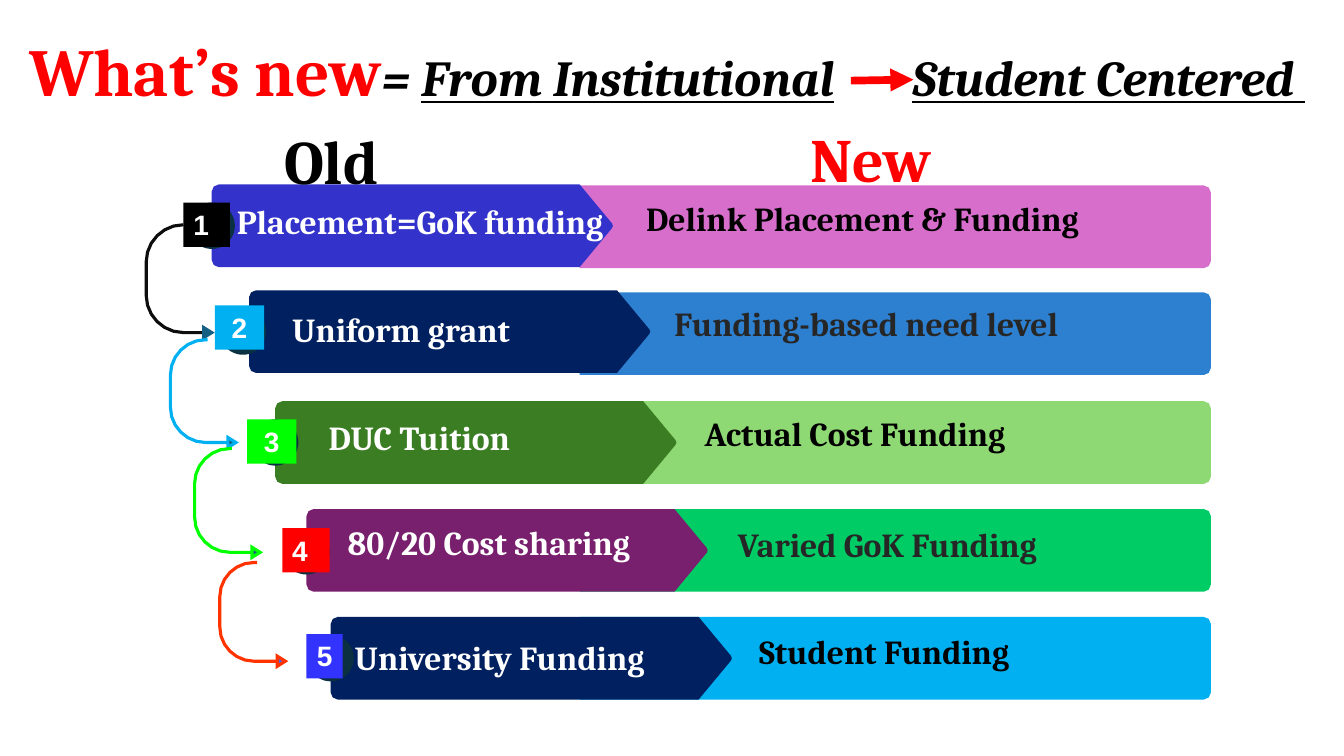
from collections import namedtuple

import pptx
import pptx.util
import pptx.dml.color
import pptx.enum.shapes
import pptx.enum.text
import pptx.oxml.ns
from lxml import etree

PX = 9144  # EMU per px, 100 px to the inch
COLORS = {
    "black": "000000", "white": "FFFFFF", "charcoal": "262626", "ink": "0D0D0D",
    "red": "FF0000", "orange": "FF3300", "lime": "00FF00", "sky": "00B0F0",
    "navy": "002060", "indigo": "3333CC", "blue": "3333FF", "azure": "2D7FCF",
    "orchid": "D86ECC", "plum": "78206E", "forest": "3B7D23", "leaf": "8ED973",
    "emerald": "00CC66", "disc": "0B3041", "teal": "156082", "iris": "4762EA",
}
RGB = {name: pptx.dml.color.RGBColor.from_string(code) for name, code in COLORS.items()}
MSO_SHAPE = pptx.enum.shapes.MSO_SHAPE
LEFT = pptx.enum.text.PP_ALIGN.LEFT
CENTER = pptx.enum.text.PP_ALIGN.CENTER
TOP = pptx.enum.text.MSO_ANCHOR.TOP
MIDDLE = pptx.enum.text.MSO_ANCHOR.MIDDLE

prs = pptx.Presentation()
prs.slide_width, prs.slide_height = 1333 * PX, 750 * PX
slide = prs.slides.add_slide(prs.slide_layouts[6])
shapes = slide.shapes


def write(holder, text, size=24, color="white", font="Cambria", align=LEFT,
          anchor=TOP, wrap=True, italic=False, underline=False):
    """Append one bold run to the first paragraph of a shape."""
    frame = holder.text_frame
    frame.word_wrap = wrap
    frame.vertical_anchor = anchor
    frame.paragraphs[0].alignment = align
    run = frame.paragraphs[0].add_run()
    run.text = text
    run.font.size = pptx.util.Pt(size)
    run.font.name = font
    run.font.bold = True
    run.font.italic = italic
    run.font.underline = underline
    run.font.color.rgb = RGB[color]


def draw_outline(corners, fill=None, line=None):
    """Draw a path through (x, y, radius) corners; it is closed when filled."""
    points = []
    for i, (x, y, radius) in enumerate(corners):
        if not radius:
            points.append((x * PX, y * PX))
            continue
        ends = []
        for nx, ny, _ in (corners[i - 1], corners[(i + 1) % len(corners)]):
            length = ((nx - x) ** 2 + (ny - y) ** 2) ** 0.5
            ends.append(((nx - x) * radius / length, (ny - y) * radius / length))
        (ax, ay), (bx, by) = ends
        count = 2 if radius < 10 else 6
        for step in range(count + 1):
            t = step / count
            a = (1 - t) ** 3 + 1.35 * t * (1 - t) ** 2
            b = t ** 3 + 1.35 * t ** 2 * (1 - t)
            points.append(((x + a * ax + b * bx) * PX, (y + a * ay + b * by) * PX))
    builder = shapes.build_freeform(*points[0], scale=1.0)
    builder.add_line_segments(points[1:], close=fill is not None)
    outline = builder.convert_to_shape()
    outline.shadow.inherit = False
    if fill:
        outline.fill.solid()
        outline.fill.fore_color.rgb = RGB[fill]
    else:
        outline.fill.background()
    if line:
        outline.line.color.rgb = RGB[line]
        outline.line.width = pptx.util.Pt(2.25)
        etree.SubElement(outline.line._get_or_add_ln(), pptx.oxml.ns.qn("a:miter"),
                         lim="800000")
    else:
        outline.line.fill.background()


# Old policy on a pointer, new policy on the panel behind it
Row = namedtuple("Row", "old old_at old_left old_top old_fill "
                        "new new_at new_top new_fill new_color new_boxed "
                        "disc badge badge_fill badge_align")
rows = [
    Row("Placement=GoK funding", (225, 194, 395, 50), 210, 183, "indigo",
        "Delink Placement & Funding", (631, 191, 510, 50), 184, "orchid", "black", False,
        (187, 201), (182, 201, 46, 44), "black", LEFT),
    Row("Uniform grant", (280, 302, 241, 50), 247, 288, "navy",
        "Funding-based need level", (659, 296, 482, 50), 290, "azure", "charcoal", False,
        (218, 306), (213, 303, 49, 44), "sky", CENTER),
    Row("DUC Tuition", (316, 409, 208, 50), 273, 398, "forest",
        "Actual Cost Funding", (689, 405, 452, 50), 398, "leaf", "black", False,
        (250, 416), (245, 416, 49, 44), "lime", CENTER),
    Row("80/20 Cost sharing", (335, 513, 316, 50), 304, 505, "plum",
        "Varied GoK Funding", (722, 515, 420, 50), 505, "emerald", "charcoal", True,
        (281, 524), (280, 524, 47, 44), "red", LEFT),
    Row("University Funding", (342, 627, 316, 50), 328, 612, "navy",
        "Student Funding", (743, 621, 398, 50), 612, "sky", "black", False,
        (305, 630), (304, 629, 36, 44), "blue", CENTER),
]
BAR_HEIGHT, BAR_RADIUS, PANEL_LEFT, PANEL_RIGHT = 82, 7, 575, 1201

for number, row in enumerate(rows, 1):
    top, bottom = row.new_top, row.new_top + BAR_HEIGHT
    draw_outline([(PANEL_LEFT, top, 0), (PANEL_RIGHT, top, BAR_RADIUS),
                  (PANEL_RIGHT, bottom, BAR_RADIUS), (PANEL_LEFT, bottom, 0)],
                 fill=row.new_fill)
    left, top, bottom = row.old_left, row.old_top, row.old_top + BAR_HEIGHT
    draw_outline([(left, top, BAR_RADIUS), (left + 365, top, 0),
                  (left + 399, top + BAR_HEIGHT / 2, 3), (left + 365, bottom, 0),
                  (left, bottom, BAR_RADIUS)], fill=row.old_fill)

    blocks = [(MSO_SHAPE.OVAL, (*row.disc, 46, 46), "disc")]
    if row.new_boxed:
        blocks.append((MSO_SHAPE.RECTANGLE, row.new_at, row.new_fill))
    else:
        new_label = shapes.add_textbox(*[v * PX for v in row.new_at])
    blocks.append((MSO_SHAPE.RECTANGLE, row.badge, row.badge_fill))
    markers = []
    for preset, at, color in blocks:
        marker = shapes.add_shape(preset, *[v * PX for v in at])
        marker.shadow.inherit = False
        marker.fill.solid()
        marker.fill.fore_color.rgb = RGB[color]
        marker.line.fill.background()
        markers.append(marker)
    if row.new_boxed:
        new_label = markers[1]
    write(new_label, row.new, color=row.new_color)
    write(markers[-1], str(number), size=20, font="Arial", align=row.badge_align,
          wrap=number < len(rows))

    old_label = shapes.add_textbox(*[v * PX for v in row.old_at])
    write(old_label, row.old, wrap=False)

# Curved steps from each badge to the next: left, top, bottom, radius, line, head
steps = [
    (145, 223, 330, 37, "ink", "teal", "teal"),
    (169, 337, 439, 35, "sky", "teal", "sky"),
    (193, 445, 548, 35, "lime", "teal", "lime"),
    (218, 558, 656, 34, "orange", "iris", "orange"),
]
for left, top, bottom, radius, color, head_fill, head_line in steps:
    draw_outline([(left + 58, bottom, 0), (left, bottom, radius),
                  (left, top, radius), (left + 37, top, 0)], line=color)
    draw_outline([(left + 57, bottom - 5, 0), (left + 65, bottom, 0),
                  (left + 57, bottom + 5, 0)], fill=head_fill, line=head_line)

for heading, at, color in (("Old", (272, 117, 287, 84), "black"),
                           ("New", (794, 115, 173, 84), "red")):
    column_head = shapes.add_textbox(*[v * PX for v in at])
    write(column_head, heading, size=44, color=color)

# Title: a tab stop leaves room for the arrow
title = shapes.add_textbox(16 * PX, 27 * PX, 1306 * PX, 85 * PX)
title.text_frame.margin_left = title.text_frame.margin_right = 13 * PX
title.text_frame.margin_top = title.text_frame.margin_bottom = 7 * PX
title_props = title.text_frame.paragraphs[0]._p.get_or_add_pPr()
tab_list = etree.SubElement(title_props, pptx.oxml.ns.qn("a:tabLst"))
etree.SubElement(tab_list, pptx.oxml.ns.qn("a:tab"), pos=str(876 * PX), algn="l")
write(title, "What’s new", size=48, color="red", anchor=MIDDLE)
for words, underline in (("= ", False), ("From Institutional", True), ("\t", False),
                         ("Student Centered ", True)):
    write(title, words, size=36, color="black", anchor=MIDDLE, italic=True,
          underline=underline)

shift_arrow = shapes.add_connector(pptx.enum.shapes.MSO_CONNECTOR.STRAIGHT,
                                   844 * PX, 80 * PX, 906 * PX, 79 * PX)
shift_arrow.line.color.rgb = RGB["red"]
shift_arrow.line.width = pptx.util.Pt(5.5)
etree.SubElement(shift_arrow.line._get_or_add_ln(), pptx.oxml.ns.qn("a:tailEnd"),
                 type="triangle")
etree.SubElement(shift_arrow._element.spPr, pptx.oxml.ns.qn("a:effectLst"))

prs.save("out.pptx")
